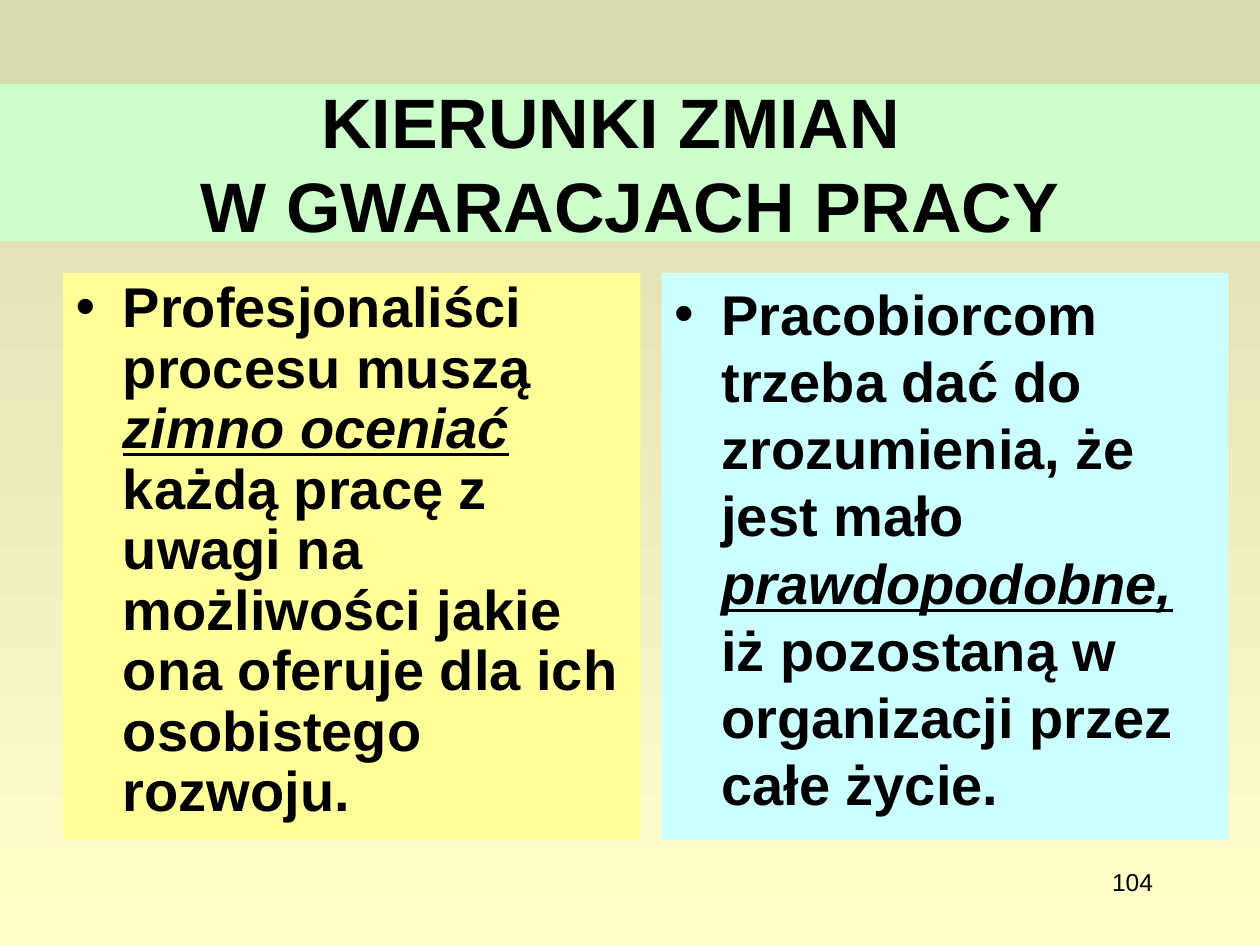
from pptx import Presentation
from pptx.dml.color import RGBColor as Rgb
from pptx.enum.text import MSO_ANCHOR as Anchor, MSO_AUTO_SIZE as AutoSize, PP_ALIGN as Align
from pptx.util import Pt

theme = {
    "font": "Arial",
    "ink": Rgb.from_string("000000"),
    "sky": [Rgb.from_string("D9D9AE"), Rgb.from_string("FFFFCC")],
    "heading_fill": Rgb.from_string("CCFFCC"),
    "professionals_fill": Rgb.from_string("FFFF99"),
    "employees_fill": Rgb.from_string("CCFFFF"),
    "heading_size": Pt(40),
    "body_size": Pt(32),
    "number_size": Pt(14),
}


def apply(target, values):
    for name, value in values.items():
        setattr(target, name, value)


def write(paragraph, text, size, **style):
    for index, line in enumerate(text.split("\n")):
        if index:
            paragraph.add_line_break()
        run = paragraph.add_run()
        run.text = line
        run.font.color.rgb = theme["ink"]
        apply(run.font, {"name": theme["font"], "size": size, **style})


deck = Presentation()
apply(deck, {"slide_width": Pt(720), "slide_height": Pt(540)})
slide = deck.slides.add_slide(deck.slide_layouts[3])

backdrop = slide.background.fill
backdrop.gradient()
backdrop.gradient_angle = 270
for stop, color, position in zip(backdrop.gradient_stops, theme["sky"], (0, 1)):
    stop.color.rgb = color
    stop.position = position

heading, professionals, employees = slide.placeholders
emphasis = {"italic": True, "underline": True}
panels = [
    (heading, (0, 48, 720, 90), "heading", Anchor.MIDDLE,
     {"alignment": Align.CENTER},
     [("KIERUNKI ZMIAN  \nW GWARACJACH PRACY", {})]),
    (professionals, (36, 156, 330, 324), "professionals", Anchor.TOP,
     {"line_spacing": 0.9},
     [("Profesjonaliści procesu muszą ", {}),
      ("zimno oceniać", emphasis),
      (" każdą pracę z uwagi na możliwości jakie ona oferuje dla ich osobistego rozwoju.", {})]),
    (employees, (378, 156, 324, 324), "employees", Anchor.TOP,
     {},
     [("Pracobiorcom trzeba dać do zrozumienia, że jest mało ", {}),
      ("prawdopodobne,", emphasis),
      (" iż pozostaną w organizacji przez całe życie.", {})]),
]

for panel, box, role, anchor, layout, phrases in panels:
    apply(panel, dict(zip(("left", "top", "width", "height"), map(Pt, box))))
    panel.fill.solid()
    panel.fill.fore_color.rgb = theme[f"{role}_fill"]
    apply(panel.text_frame, {
        "word_wrap": True, "auto_size": AutoSize.NONE, "vertical_anchor": anchor,
    })
    paragraph = panel.text_frame.paragraphs[0]
    apply(paragraph, layout)
    size = theme["heading_size"] if role == "heading" else theme["body_size"]
    for text, style in phrases:
        write(paragraph, text, size, bold=True, **style)

page_number = slide.shapes.add_textbox(Pt(516), Pt(492), Pt(150), Pt(36))
page_number.text_frame.word_wrap = True
number_line = page_number.text_frame.paragraphs[0]
number_line.alignment = Align.RIGHT
write(number_line, "104", theme["number_size"])

deck.save("out.pptx")
